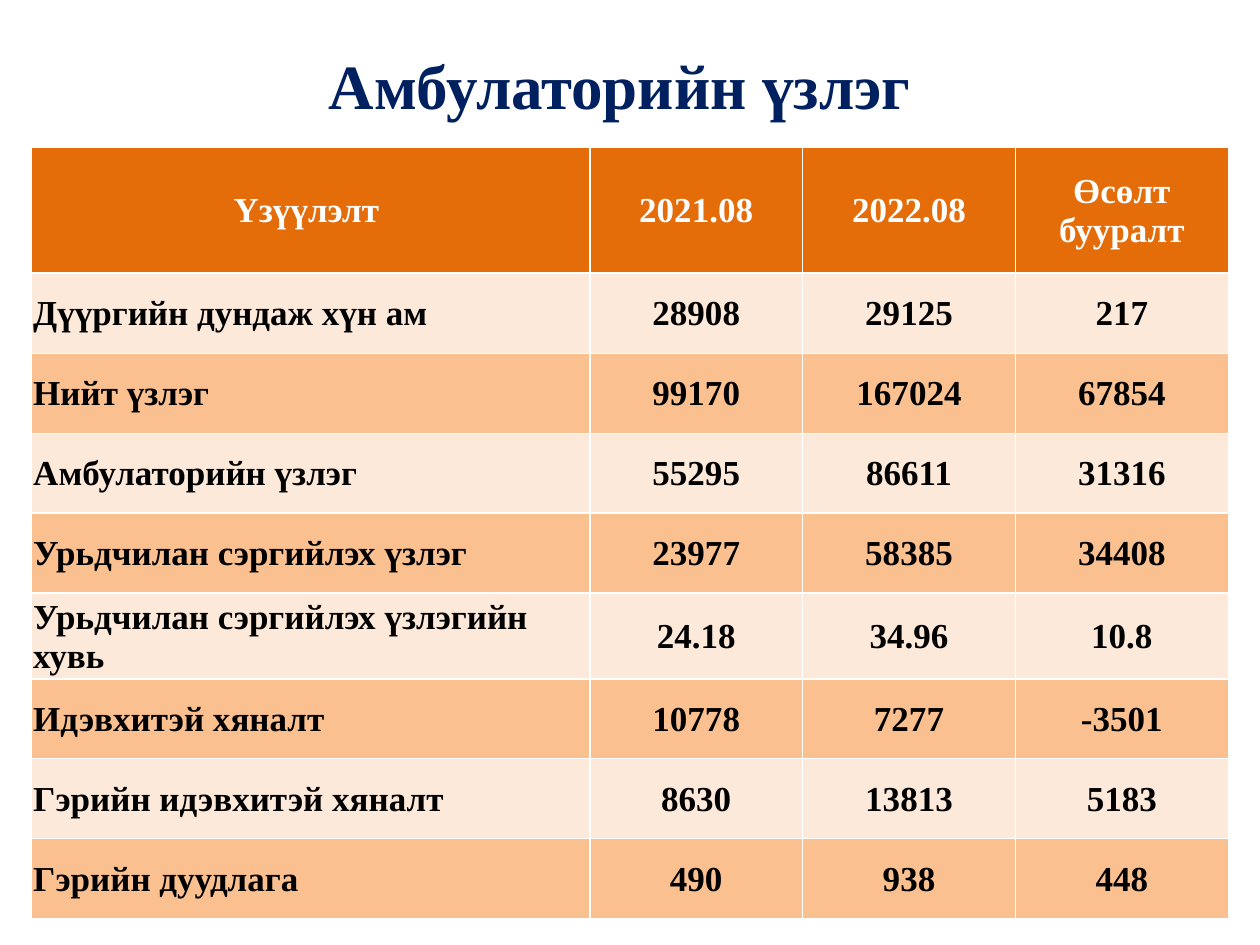
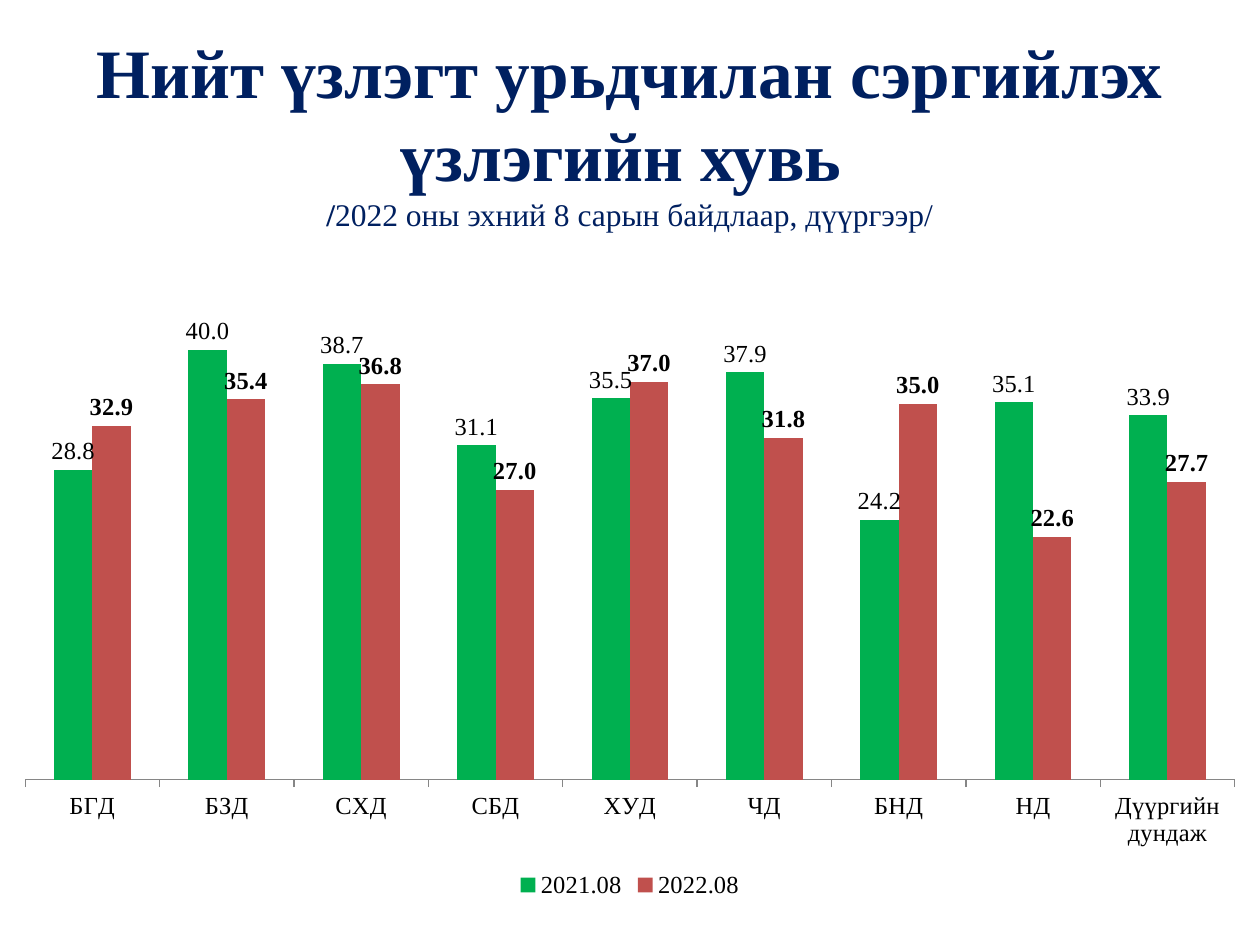
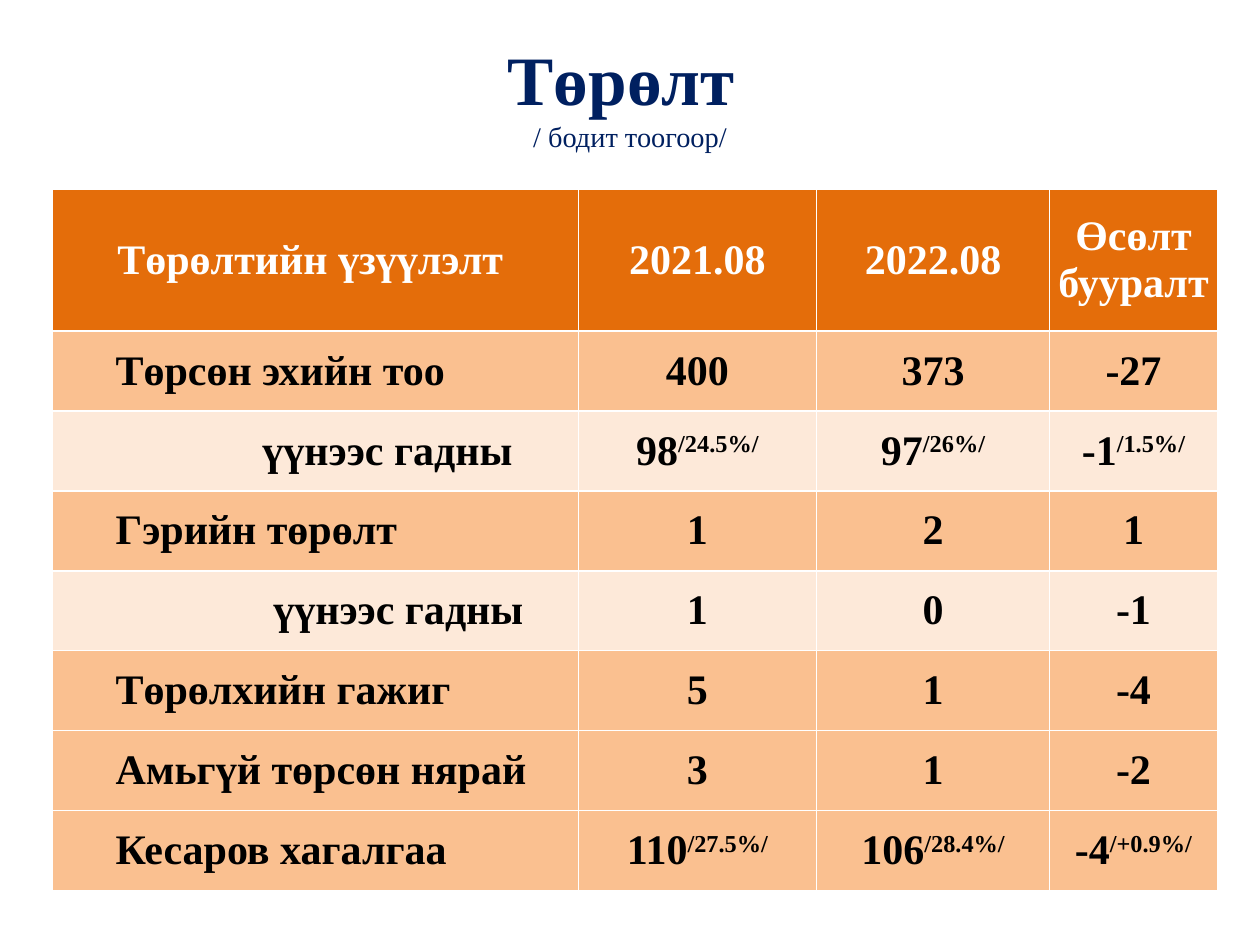
from collections import namedtuple

from lxml import etree
from pptx import Presentation
from pptx.chart.data import CategoryChartData
from pptx.dml.color import RGBColor
from pptx.enum.chart import XL_CHART_TYPE, XL_LABEL_POSITION, XL_LEGEND_POSITION, XL_TICK_MARK
from pptx.enum.text import MSO_ANCHOR, PP_ALIGN
from pptx.oxml import parse_xml
from pptx.oxml.ns import nsdecls, qn
from pptx.util import Cm, Pt

COLUMNS = XL_CHART_TYPE.COLUMN_CLUSTERED
LABEL_ABOVE = XL_LABEL_POSITION.OUTSIDE_END
LEGEND_BELOW = XL_LEGEND_POSITION.BOTTOM
TICK_OUTSIDE = XL_TICK_MARK.OUTSIDE
MIDDLE = MSO_ANCHOR.MIDDLE
CENTER = PP_ALIGN.CENTER
LEFT = PP_ALIGN.LEFT

FONT = "Times New Roman"
COLORS = {
    "title": "002060", "text": "000000", "white": "FFFFFF", "header": "E46D0A",
    "light": "FDE9D9", "dark": "FAC090", "axis": "868686",
    "2021.08": "00B050", "2022.08": "C0504D",
}
BORDER_XML = '<a:{side} {ns} w="{width}"><a:solidFill><a:srgbClr val="{color}"/></a:solidFill></a:{side}>'

Box = namedtuple("Box", "left top width height")
Row = namedtuple("Row", "cells fill indent", defaults=(0,))

VISIT_HEADER = ["Үзүүлэлт ", "2021.08", "2022.08", "Өсөлт бууралт"]
VISIT_CELLS = [
    ["Дүүргийн дундаж хүн ам", "28908", "29125", "217"],
    ["Нийт үзлэг", "99170", "167024", "67854"],
    ["Амбулаторийн үзлэг", "55295", "86611", "31316"],
    ["Урьдчилан сэргийлэх үзлэг", "23977", "58385", "34408"],
    ["Урьдчилан сэргийлэх үзлэгийн хувь", "24.18", "34.96", "10.8"],
    ["Идэвхитэй хяналт", "10778", "7277", "-3501"],
    ["Гэрийн идэвхитэй хяналт", "8630", "13813", "5183"],
    ["Гэрийн дуудлага", "490", "938", "448"],
]
VISIT_ROWS = [Row(cells, ("light", "dark")[index % 2]) for index, cells in enumerate(VISIT_CELLS)]

# In a cell, the part after "^" is raised.
BIRTH_HEADER = ["Төрөлтийн үзүүлэлт ", "2021.08", "2022.08", "Өсөлт бууралт"]
BIRTH_ROWS = [
    Row(["Төрсөн эхийн тоо", "400", "373", "-27"], "dark", 1.27),
    Row(["үүнээс гадны", "98^/24.5%/", "97^/26%/", "-1^/1.5%/"], "light", 4.23),
    Row(["Гэрийн төрөлт", "1", "2", "1"], "dark", 1.27),
    Row(["үүнээс гадны", "1", "0", "-1"], "light", 4.45),
    Row(["Төрөлхийн гажиг", "5", "1", "-4"], "dark", 1.27),
    Row(["Амьгүй төрсөн нярай", "3", "1", "-2"], "dark", 1.27),
    Row(["Кесаров хагалгаа", "110^/27.5%/", "106^/28.4%/", "-4^/+0.9%/"], "dark", 1.27),
]

DISTRICTS = ["БГД", "БЗД", "СХД", "СБД", "ХУД", "ЧД", "БНД", "НД", "Дүүргийн дундаж"]
PREVENTIVE_SHARES = {
    "2021.08": [28.8, 40, 38.7, 31.1, 35.5, 37.9, 24.2, 35.1, 33.9],
    "2022.08": [32.9, 35.4, 36.8, 27, 37, 31.8, 35, 22.6, 27.7],
}


def rgb(name):
    return RGBColor.from_string(COLORS[name])


def set_font(font, size, color="text", bold=False):
    for name, value in {"name": FONT, "size": Pt(size), "bold": bold}.items():
        setattr(font, name, value)
    font.color.rgb = rgb(color)


def in_cm(box):
    return [Cm(length) for length in box]


def add_title(page, box, lines):
    """Each line is a list of (text, size, bold) spans."""
    frame = page.shapes.add_textbox(*in_cm(box)).text_frame
    frame.word_wrap = True
    frame.vertical_anchor = MIDDLE
    para = frame.paragraphs[0]
    para.alignment = CENTER
    for index, line in enumerate(lines):
        if index:
            para.add_line_break()
        for text, size, bold in line:
            span = para.add_run()
            span.text = text
            set_font(span.font, size, "title", bold)


def set_borders(cell, top, bottom):
    properties = cell._tc.get_or_add_tcPr()
    for side, width in {"lnL": 1, "lnR": 1, "lnT": top, "lnB": bottom}.items():
        properties.append(parse_xml(BORDER_XML.format(
            side=side, ns=nsdecls("a"), width=Pt(width), color=COLORS["white"])))


def fill_cell(cell, text, size, color, fill, align, margin, indent):
    cell.fill.solid()
    cell.fill.fore_color.rgb = rgb(fill)
    cell.vertical_anchor = MIDDLE
    for side in ("left", "top", "right"):
        setattr(cell, f"margin_{side}", Cm(margin))
    cell.margin_bottom = 0
    para = cell.text_frame.paragraphs[0]
    para.alignment = align
    if indent:
        para.level = 1
        para._p.get_or_add_pPr().set("marL", str(Cm(indent)))
    base, _, raised = text.partition("^")
    for part in filter(None, (base, raised)):
        span = para.add_run()
        span.text = part
        set_font(span.font, size, color, True)
        if part is raised:
            span._r.get_or_add_rPr().set("baseline", "30000")


def add_comparison_table(page, box, widths, header_height, header, rows, size, margin=0):
    table = page.shapes.add_table(len(rows) + 1, len(widths), *in_cm(box)).table
    table.horz_banding = False
    for column, width in zip(table.columns, widths):
        column.width = Cm(width)
    row_height = (box.height - header_height) / len(rows)
    for index, row in enumerate([Row(header, "header"), *rows]):
        is_header = index == 0
        table.rows[index].height = Cm(header_height if is_header else row_height)
        for column, text in enumerate(row.cells):
            cell = table.cell(index, column)
            set_borders(cell, 1.5 if index == 1 else 1, 1.5 if is_header else 1)
            fill_cell(cell, text, size, "white" if is_header else "text", row.fill,
                      CENTER if is_header or column else LEFT, margin,
                      0 if column else row.indent)


def set_plot_layout(chart, **shares):
    """Place the inner plot area by shares (x, y, w, h) of the chart."""
    area = chart._chartSpace.chart.plotArea
    for old in area.findall(qn("c:layout")):
        area.remove(old)
    layout = etree.Element(qn("c:layout"))
    manual = etree.SubElement(layout, qn("c:manualLayout"))
    values = {"layoutTarget": "inner", "xMode": "edge", "yMode": "edge", **shares}
    for name, value in values.items():
        etree.SubElement(manual, qn(f"c:{name}")).set("val", str(value))
    area.insert(0, layout)


def add_district_chart(page, box):
    data = CategoryChartData(number_format="0.0")
    data.categories = DISTRICTS
    for name, values in PREVENTIVE_SHARES.items():
        data.add_series(name, values)
    chart = page.shapes.add_chart(COLUMNS, *in_cm(box), data).chart
    set_font(chart.font, 14)
    chart.has_title = False
    chart.has_legend = True
    chart.legend.position = LEGEND_BELOW
    chart.legend.include_in_layout = False

    value_axis, category_axis = chart.value_axis, chart.category_axis
    formats = {"visible": False, "has_major_gridlines": False,
               "minimum_scale": 0, "maximum_scale": 45}
    for name, value in formats.items():
        setattr(value_axis, name, value)
    category_axis.major_tick_mark = TICK_OUTSIDE
    category_axis.format.line.color.rgb = rgb("axis")

    plot = chart.plots[0]
    for name, value in {"gap_width": 150, "overlap": 0, "vary_by_categories": False}.items():
        setattr(plot, name, value)
    for series in plot.series:
        series.format.fill.solid()
        series.format.fill.fore_color.rgb = rgb(series.name)
        labels = series.data_labels
        formats = {"show_value": True, "number_format": "0.0",
                   "number_format_is_linked": False, "position": LABEL_ABOVE}
        for name, value in formats.items():
            setattr(labels, name, value)
        set_font(labels.font, 14, bold=series.name == "2022.08")
    set_plot_layout(chart, x=0.02, y=0.02, w=0.96, h=0.78)


def build_visits(page):
    add_title(page, Box(1.06, 0.64, 22.86, 2.12), [[("Амбулаторийн үзлэг", 36, True)]])
    add_comparison_table(page, Box(0.64, 2.97, 24.12, 15.44), [11.25, 4.29, 4.29, 4.29],
                         2.54, VISIT_HEADER, VISIT_ROWS, 20, margin=0.03)


def build_preventive_share(page):
    add_title(page, Box(1.27, 1.27, 22.86, 2.75), [
        [("Нийт үзлэгт урьдчилан сэргийлэх үзлэгийн хувь ", 39.6, True)],
        [("/", 18, True), ("2022 оны эхний 8 сарын байдлаар, дүүргээр/", 18, False)],
    ])
    add_district_chart(page, Box(0, 5.72, 25.4, 12.5))


def build_births(page):
    add_title(page, Box(1.27, 0.85, 22.86, 2.12), [
        [("Төрөлт ", 39.6, True)],
        [("/ бодит тоогоор/", 16.2, False)],
    ])
    add_comparison_table(page, Box(1.06, 3.81, 23.48, 14.15), [10.6, 4.8, 4.7, 3.38],
                         2.86, BIRTH_HEADER, BIRTH_ROWS, 24)


def main():
    deck = Presentation()
    deck.slide_width, deck.slide_height = Cm(25.4), Cm(19.05)
    blank = deck.slide_layouts[6]
    for build in (build_visits, build_preventive_share, build_births):
        build(deck.slides.add_slide(blank))
    deck.save("out.pptx")


if __name__ == "__main__":
    main()
